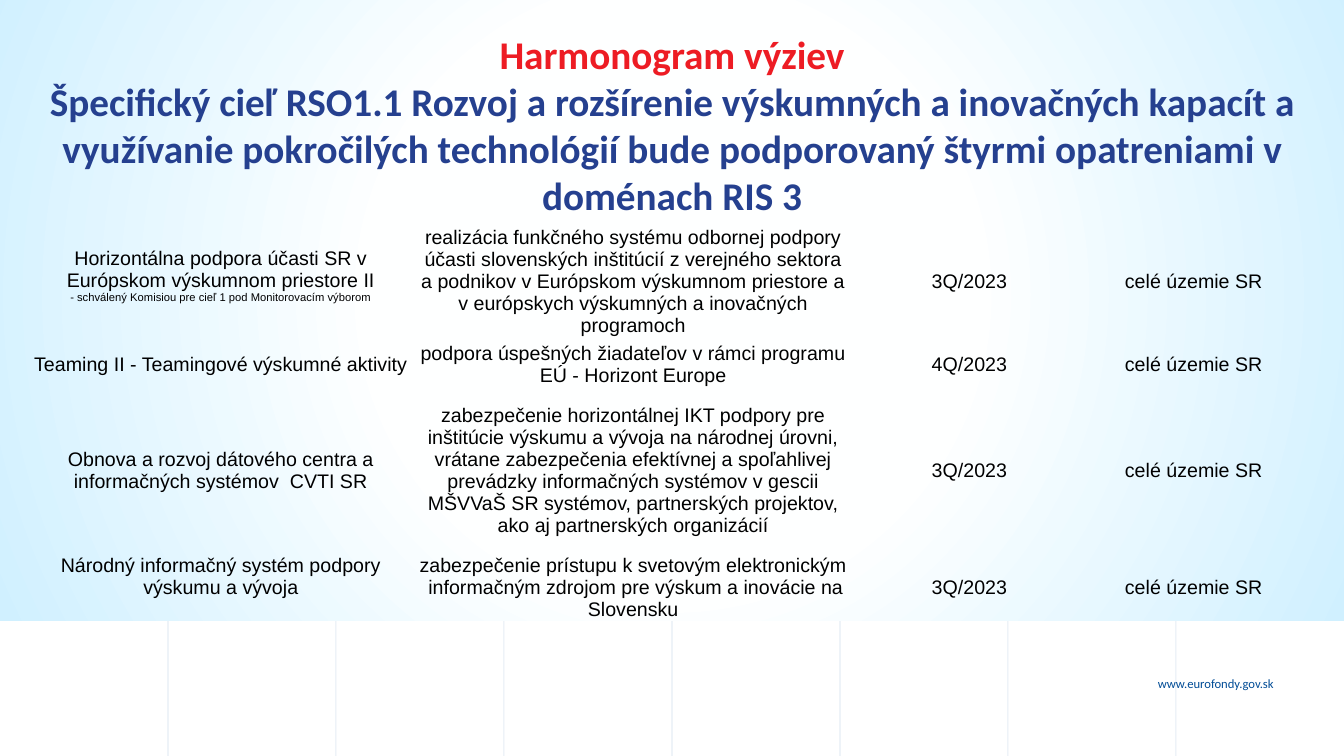
import pptx
import pptx.util
import pptx.dml.color
import pptx.enum.shapes
import pptx.enum.text
import pptx.oxml
from lxml import etree
from pptx.util import Inches, Pt

COLORS = {
    "white": "FFFFFF", "glow": "FEFFFF", "sky": "D0F0FF",
    "blue": "004C96", "navy": "25408F", "red": "ED1C24", "black": "000000",
}
WIDTH, HEIGHT, BANDS = 13.33, 7.5, 8
NS = "http://schemas.openxmlformats.org/drawingml/2006/main"
PLAIN = "{2D5ABB26-0587-4C30-8999-92F81FD0307C}"
ALIGN = pptx.enum.text.PP_ALIGN
AREA = "celé územie SR"
COLS = [3.9, 4.28, 2.39, 2.06]
ROWS = [1.17, 0.47, 1.62, 0.69]
CALLS = [
    ("Horizontálna podpora účasti SR v Európskom výskumnom priestore II",
     "realizácia funkčného systému odbornej podpory účasti slovenských inštitúcií "
     "z verejného sektora a podnikov v Európskom výskumnom priestore a "
     "v európskych výskumných a inovačných programoch", "3Q/2023", AREA),
    ("Teaming II - Teamingové výskumné aktivity",
     "podpora úspešných žiadateľov v rámci programu EÚ - Horizont Europe",
     "4Q/2023", AREA),
    ("Obnova a rozvoj dátového centra a informačných systémov  CVTI SR",
     "zabezpečenie horizontálnej IKT podpory pre inštitúcie výskumu a vývoja "
     "na národnej úrovni, vrátane zabezpečenia efektívnej a spoľahlivej prevádzky "
     "informačných systémov v gescii MŠVVaŠ SR systémov, partnerských projektov, "
     "ako aj partnerských organizácií", "3Q/2023", AREA),
    ("Národný informačný systém podpory výskumu a vývoja",
     "zabezpečenie prístupu k svetovým elektronickým  informačným zdrojom "
     "pre výskum a inovácie na Slovensku", "3Q/2023", AREA),
]
NOTE = "- schválený Komisiou pre cieľ 1 pod Monitorovacím výborom"
HEAD = "Harmonogram výziev"
GOAL = ("Špecifický cieľ RSO1.1 Rozvoj a rozšírenie výskumných a inovačných kapacít a "
        "využívanie pokročilých technológií bude podporovaný štyrmi opatreniami v "
        "doménach RIS 3")


def tint(name):
    return pptx.dml.color.RGBColor.from_string(COLORS[name])


def fade(fill, part):
    color = fill.find(f".//{{{NS}}}srgbClr")
    etree.SubElement(color, f"{{{NS}}}alpha", val=str(part * 1000))


def add_run(para, text, size, color, font="Arial", bold=False):
    run = para.add_run()
    run.text = text
    run.font.name = font
    run.font.size = Pt(size)
    run.font.bold = bold
    run.font.color.rgb = tint(color)


def add_line(slide, x):
    line = slide.shapes.add_connector(
        pptx.enum.shapes.MSO_CONNECTOR.STRAIGHT,
        Inches(x), 0, Inches(x), Inches(HEIGHT))
    line.line.width = Pt(0.75)
    line.line.color.rgb = tint("blue")
    props = line._element.spPr
    fade(props, 10)
    etree.SubElement(props, f"{{{NS}}}effectLst")


def add_rect(slide, x, y, width, height):
    rect = slide.shapes.add_shape(
        pptx.enum.shapes.MSO_SHAPE.RECTANGLE,
        Inches(x), Inches(y), Inches(width), Inches(height))
    rect.shadow.inherit = False
    rect.line.fill.background()
    rect.fill.solid()
    rect.fill.fore_color.rgb = tint("white")
    return rect


def add_glow(slide):
    rect = add_rect(slide, 0, -0.32, 13.35, 6.48)
    stops = "".join(
        f'<a:gs pos="{pos * 1000}"><a:srgbClr val="{COLORS[name]}"/></a:gs>'
        for pos, name in ((0, "glow"), (40, "glow"), (100, "sky")))
    grad = pptx.oxml.parse_xml(
        f'<a:gradFill xmlns:a="{NS}" rotWithShape="1"><a:gsLst>{stops}</a:gsLst>'
        '<a:path path="circle"><a:fillToRect l="50000" t="50000" r="50000" b="50000"/>'
        '</a:path></a:gradFill>')
    props = rect._element.spPr
    props.replace(props.find(f"{{{NS}}}solidFill"), grad)


def add_text(slide, x, y, width, height, align):
    box = slide.shapes.add_textbox(Inches(x), Inches(y), Inches(width), Inches(height))
    box.text_frame.word_wrap = True
    para = box.text_frame.paragraphs[0]
    para.alignment = align
    return para


def fill_cell(cell, text):
    cell.fill.background()
    cell.vertical_anchor = pptx.enum.text.MSO_ANCHOR.MIDDLE
    cell.margin_left = cell.margin_right = cell.margin_top = Inches(0.01)
    cell.margin_bottom = 0
    para = cell.text_frame.paragraphs[0]
    para.alignment = ALIGN.CENTER
    add_run(para, text, 14, "black")
    return para


def add_grid(slide):
    frame = slide.shapes.add_table(
        len(ROWS), len(COLS), Inches(0.24), Inches(2.2),
        Inches(sum(COLS)), Inches(sum(ROWS)))
    table = frame.table
    table.first_row = table.horz_banding = False
    table._tbl.tblPr.find(f"{{{NS}}}tableStyleId").text = PLAIN
    for col, width in zip(table.columns, COLS):
        col.width = Inches(width)
    for row, height, call in zip(table.rows, ROWS, CALLS):
        row.height = Inches(height)
        for cell, text in zip(row.cells, call):
            fill_cell(cell, text)
    first = table.cell(0, 0)
    para = first.text_frame.paragraphs[0]
    para.add_line_break()
    add_run(para, NOTE, 8, "black")
    first.margin_bottom = Inches(0.12)
    table.cell(len(ROWS) - 1, 0).margin_bottom = Inches(0.22)


def main():
    deck = pptx.Presentation()
    deck.slide_width, deck.slide_height = Inches(WIDTH), Inches(HEIGHT)
    slide = deck.slides.add_slide(deck.slide_layouts[6])
    step = WIDTH / BANDS
    for i in range(1, BANDS):
        add_line(slide, i * step)
    for i in range(BANDS):
        band = add_rect(slide, i * step, 0, step, HEIGHT)
        fade(band._element.spPr, 4)
    site = add_text(slide, 10.73, 6.66, 2, 0.25, ALIGN.RIGHT)
    add_run(site, "www.eurofondy.gov.sk", 9, "blue", "Calibri")
    add_glow(slide)
    title = add_text(slide, 0, 0.25, WIDTH, 2.93, ALIGN.CENTER)
    add_run(title, HEAD, 28, "red", "Calibri", True)
    title.add_line_break()
    add_run(title, GOAL, 28, "navy", "Calibri", True)
    add_grid(slide)
    deck.save("out.pptx")


if __name__ == "__main__":
    main()
